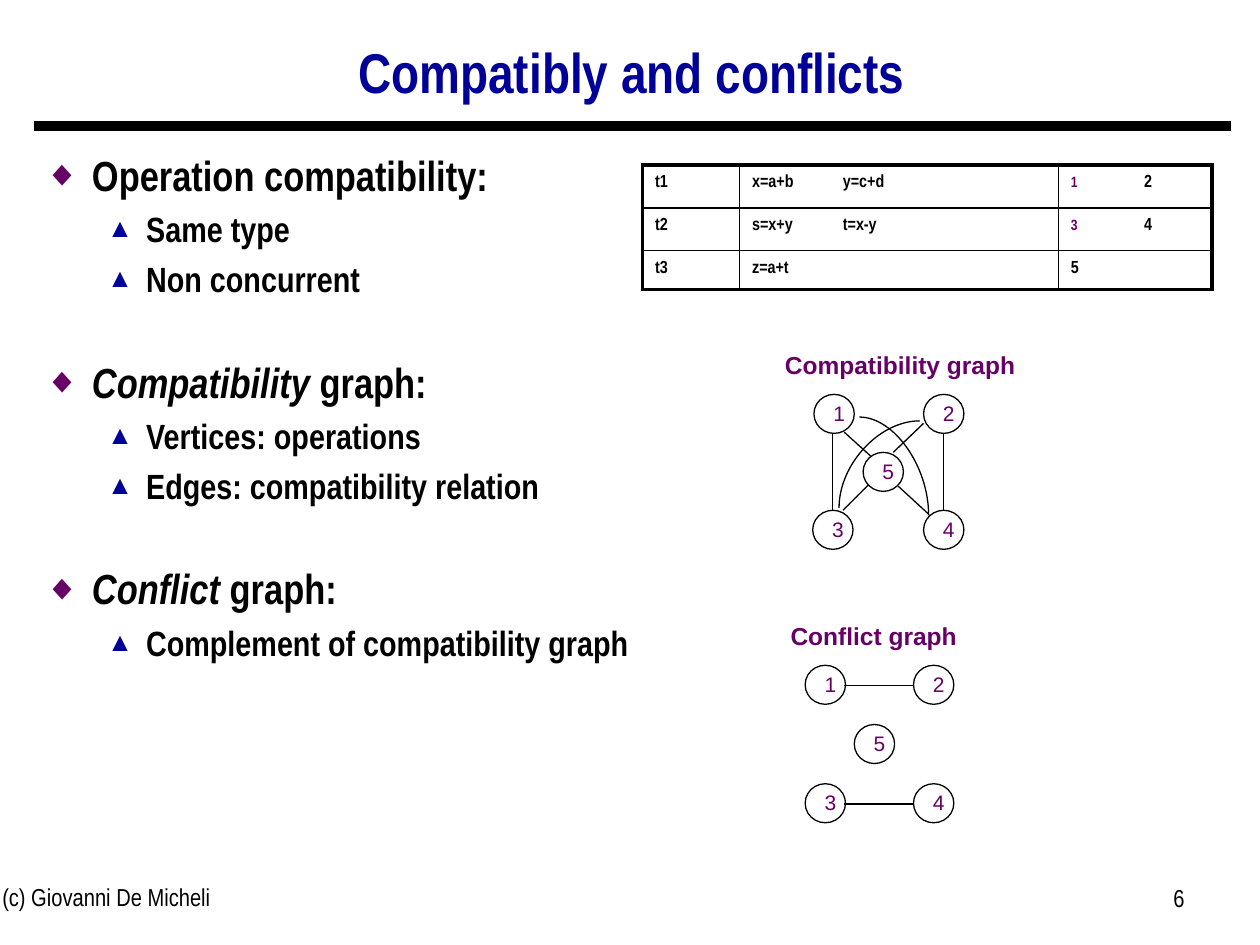
import dataclasses
import lxml.etree
import pptx
import pptx.dml.color
import pptx.enum.shapes
import pptx.enum.text
import pptx.oxml.ns
import pptx.util

Inches = pptx.util.Inches
Pt = pptx.util.Pt
Align = pptx.enum.text.PP_ALIGN
Anchor = pptx.enum.text.MSO_ANCHOR
Link = pptx.enum.shapes.MSO_CONNECTOR
COLORS = {"black": "000000", "navy": "000099", "plum": "660066"}
NARROW = "Arial Narrow"


@dataclasses.dataclass
class Item:
    text: str
    level: int = 1
    accent: str = ""
    before: float = 6.8


@dataclasses.dataclass
class Node:
    label: str
    left: float
    top: float


@dataclasses.dataclass
class Edge:
    x1: float
    y1: float
    x2: float
    y2: float
    curved: bool = False


ITEMS = [
    Item("Operation compatibility:", 0, before=8),
    Item("Same type"),
    Item("Non concurrent"),
    Item(" graph:", 0, "Compatibility", 35.5),
    Item("Vertices: operations"),
    Item("Edges: compatibility relation"),
    Item(" graph:", 0, "Conflict", 35.5),
    Item("Complement of compatibility graph"),
]
ROWS = [
    ("t1", "x=a+b\ty=c+d", "2", 1),
    ("t2", "s=x+y\tt=x-y", "4", 3),
    ("t3", "z=a+t", "5", None),
]
MATCH_NODES = [
    Node("1", 6.46, 3.13), Node("2", 7.33, 3.13), Node("3", 6.45, 4.05),
    Node("4", 7.33, 4.05), Node("5", 6.85, 3.59),
]
MATCH_EDGES = [
    Edge(6.61, 3.44, 6.61, 4.05), Edge(7.49, 3.44, 7.49, 4.05),
    Edge(6.69, 4.05, 6.89, 3.85), Edge(7.09, 3.59, 7.33, 3.36),
    Edge(6.7, 3.43, 6.91, 3.62), Edge(7.13, 3.86, 7.37, 4.08),
    Edge(6.82, 3.31, 7.37, 4.09, True), Edge(7.3, 3.34, 6.66, 4.03, True),
]
CLASH_NODES = [
    Node("1", 6.39, 5.28), Node("2", 7.25, 5.28), Node("3", 6.39, 6.22),
    Node("4", 7.25, 6.22), Node("5", 6.78, 5.75),
]
CLASH_EDGES = [Edge(6.7, y, 7.25, y) for y in (5.44, 6.38)]


def paint(name: str) -> pptx.dml.color.RGBColor:
    return pptx.dml.color.RGBColor.from_string(COLORS[name])


def add_tag(parent, tag: str, **attrs):
    return lxml.etree.SubElement(parent, pptx.oxml.ns.qn(tag), **attrs)


def style(para, size: float, font: str, color: str, bold: bool = False) -> None:
    for run in para.runs:
        run.font.size = Pt(size)
        run.font.name = font
        run.font.bold = bold
        run.font.color.rgb = paint(color)


def add_mark(para, color: str, size: int, left: float, hang: float, tag: str, **attrs) -> None:
    props = para._p.get_or_add_pPr()
    props.set("marL", str(Inches(left)))
    props.set("indent", str(-Inches(hang)))
    add_tag(add_tag(props, "a:buClr"), "a:srgbClr", val=COLORS[color])
    add_tag(props, "a:buSzPct", val=str(size * 1000))
    add_tag(props, "a:buFont", typeface="Arial")
    add_tag(props, tag, **attrs)


def place(shape, left: float, top: float, width: float, height: float) -> None:
    shape.left, shape.top = Inches(left), Inches(top)
    shape.width, shape.height = Inches(width), Inches(height)


def add_text(slide, text: str, left: float, top: float, width: float, height: float,
             size: float, font: str, color: str, align, bold: bool = False) -> None:
    box = slide.shapes.add_textbox(Inches(left), Inches(top), Inches(width), Inches(height))
    box.text_frame.word_wrap = True
    box.text_frame.text = text
    para = box.text_frame.paragraphs[0]
    para.alignment = align
    style(para, size, font, color, bold)


def add_edge(slide, edge: Edge, width: float = 0.75) -> None:
    line = slide.shapes.add_connector(
        Link.CURVE if edge.curved else Link.STRAIGHT,
        Inches(edge.x1), Inches(edge.y1), Inches(edge.x2), Inches(edge.y2))
    line.line.color.rgb = paint("black")
    line.line.width = Pt(width)
    props = line._element.spPr
    if edge.curved:
        props.find(pptx.oxml.ns.qn("a:prstGeom")).set("prst", "curvedConnector2")
    add_tag(props, "a:effectLst")


def add_node(slide, node: Node) -> None:
    ring = slide.shapes.add_shape(
        pptx.enum.shapes.MSO_SHAPE.OVAL,
        Inches(node.left), Inches(node.top), Inches(0.32), Inches(0.31))
    ring.shadow.inherit = False
    ring.fill.background()
    ring.line.color.rgb = paint("black")
    ring.line.width = Pt(0.75)
    add_text(slide, node.label, node.left, node.top, 0.4, 0.3, 12, "Arial", "plum", Align.CENTER)


def add_graph(slide, name: str, left: float, top: float, width: float,
              nodes: list[Node], edges: list[Edge]) -> None:
    add_text(slide, name, left, top, width, 0.33, 14, "Arial", "plum", Align.CENTER, True)
    for node in nodes:
        add_node(slide, node)
    for edge in edges:
        add_edge(slide, edge)


def fill_body(body) -> None:
    place(body, 0.25, 1.18, 5.16, 5.75)
    frame = body.text_frame
    frame.auto_size = pptx.enum.text.MSO_AUTO_SIZE.NONE
    frame.vertical_anchor = Anchor.TOP
    frame.text = "\n".join(item.accent + item.text for item in ITEMS)
    for para, item in zip(frame.paragraphs, ITEMS):
        if item.accent:
            para.text = item.accent
            para.runs[0].font.italic = True
            para.add_run().text = item.text
        para.level = item.level
        para.line_spacing = 0.9
        para.space_before = Pt(item.before)
        if item.level:
            style(para, 20, NARROW, "black", True)
            add_mark(para, "navy", 75, 0.81, 0.31, "a:buChar", char="▲")
        else:
            style(para, 24, NARROW, "black", True)
            add_mark(para, "plum", 85, 0.38, 0.38, "a:buChar", char="◆")


def add_border(cell, side: str, width: float) -> None:
    line = add_tag(cell._tc.get_or_add_tcPr(), "a:ln" + side, w=str(Pt(width)))
    add_tag(add_tag(line, "a:solidFill"), "a:srgbClr", val=COLORS["black"])


def add_steps(slide) -> None:
    table = slide.shapes.add_table(
        3, 3, Inches(5.1), Inches(1.31), Inches(4.52), Inches(0.99)).table
    table.first_row = table.horz_banding = False
    for col, width in zip(table.columns, (0.77, 2.53, 1.22)):
        col.width = Inches(width)
    for row, height in zip(table.rows, (0.34, 0.34, 0.31)):
        row.height = Inches(height)
    for r, (*texts, start) in enumerate(ROWS):
        for c, text in enumerate(texts):
            cell = table.cell(r, c)
            outer = {"L": c == 0, "R": c == 2, "T": r == 0, "B": r == 2}
            for side, thick in outer.items():
                add_border(cell, side, 2.25 if thick else 1)
            cell.fill.background()
            cell.text_frame.text = text
            para = cell.text_frame.paragraphs[0]
            para.line_spacing = 1.25
            para.space_before = Pt(3)
            style(para, 10, NARROW, "black", True)
            if c == 1:
                tabs = add_tag(para._p.get_or_add_pPr(), "a:tabLst")
                add_tag(tabs, "a:tab", pos=str(Inches(0.72)), algn="l")
            if c == 2 and start:
                add_mark(para, "plum", 85, 0.58, 0.58, "a:buAutoNum",
                         type="arabicPlain", startAt=str(start))


def main() -> None:
    deck = pptx.Presentation()
    deck.slide_width, deck.slide_height = Inches(10), Inches(7.5)
    slide = deck.slides.add_slide(deck.slide_layouts[1])
    title, body = slide.placeholders
    place(title, 0.26, 0.22, 9.51, 0.75)
    title.text_frame.text = "Compatibly and conflicts"
    title.text_frame.vertical_anchor = Anchor.MIDDLE
    head = title.text_frame.paragraphs[0]
    head.alignment = Align.CENTER
    head.line_spacing = 0.9
    style(head, 32, NARROW, "navy", True)
    add_edge(slide, Edge(0.27, 1, 9.77, 1), 6)
    fill_body(body)
    add_steps(slide)
    add_graph(slide, "Compatibility graph", 6.01, 2.73, 2.27, MATCH_NODES, MATCH_EDGES)
    add_graph(slide, "Conflict graph", 6.07, 4.88, 1.73, CLASH_NODES, CLASH_EDGES)
    add_text(slide, "(c) Giovanni De Micheli", -0.08, 6.95, 3.17, 0.52, 14, NARROW, "black", Align.LEFT)
    add_text(slide, "6", 7.17, 6.96, 2.33, 0.52, 14, NARROW, "black", Align.RIGHT)
    deck.save("out.pptx")


if __name__ == "__main__":
    main()
